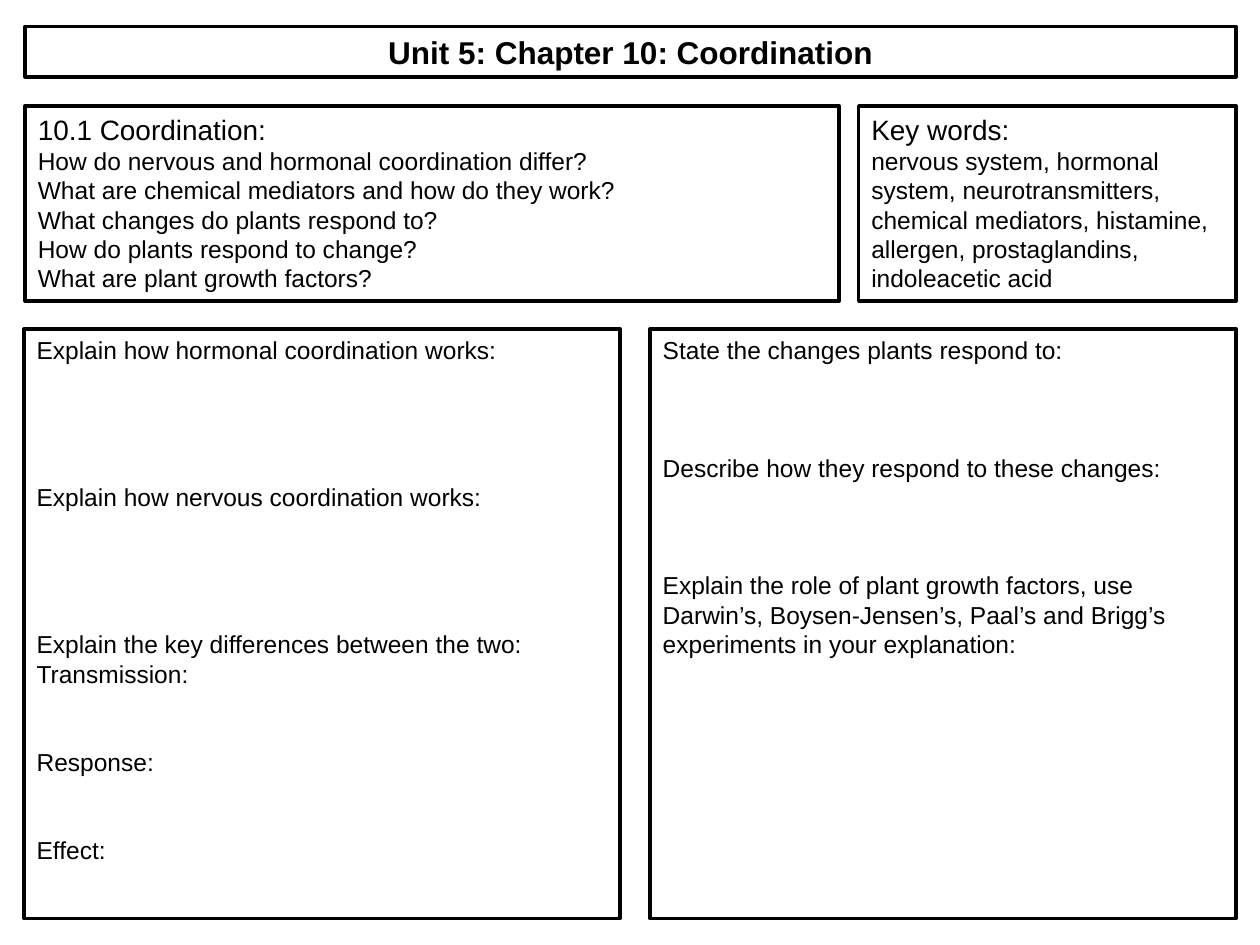
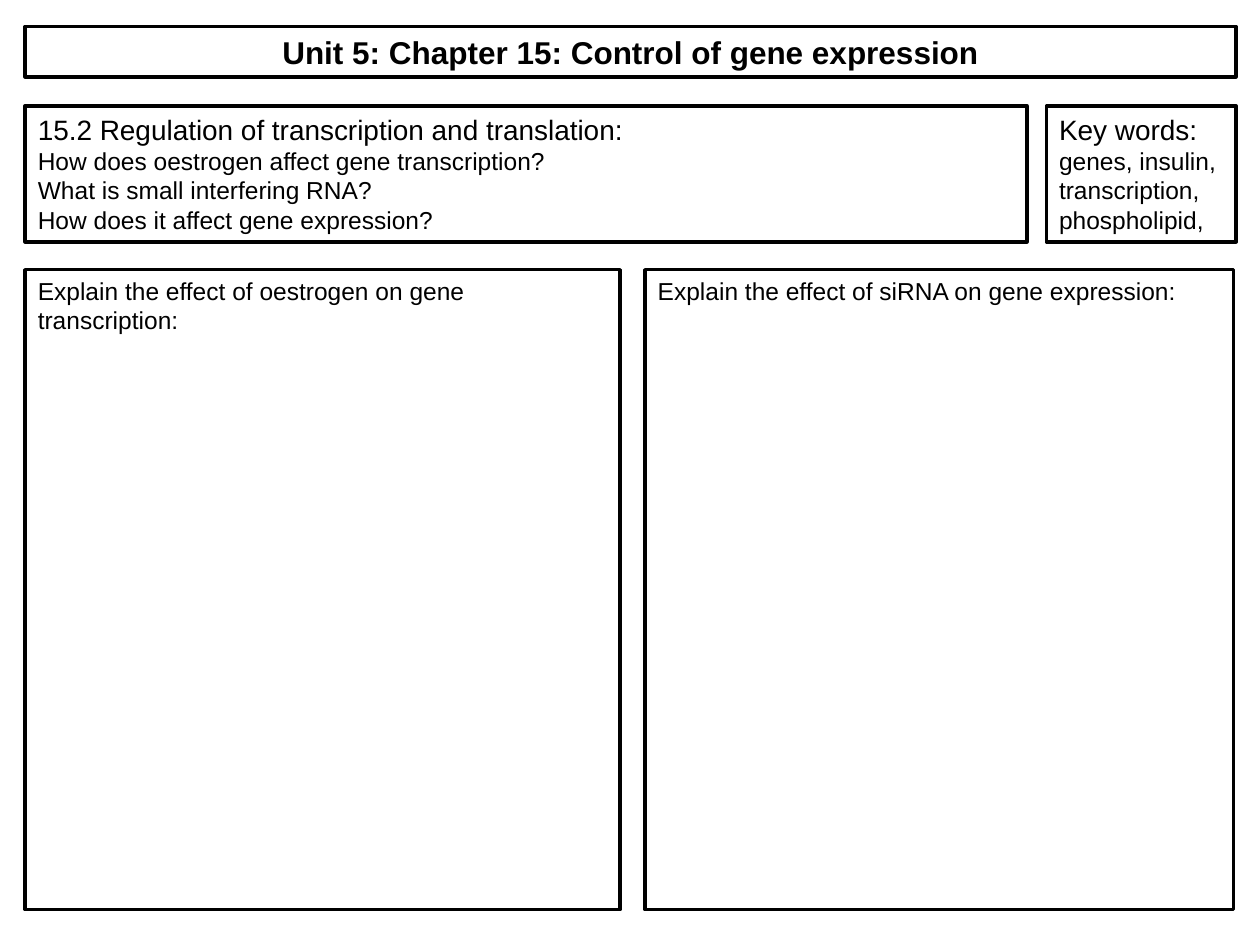
from dataclasses import dataclass

from lxml import etree
from pptx import Presentation
from pptx import util as u
from pptx.dml.color import RGBColor
from pptx.enum import text
from pptx.oxml.ns import qn


@dataclass(frozen=True)
class Theme:
    font: str = "Arial"
    ink: RGBColor = RGBColor(0, 0, 0)
    paper: RGBColor = RGBColor(255, 255, 255)
    title: int = 18
    head: int = 16
    body: int = 14
    line: int = 2
    lead: float = 1.2


COLS = 100
LEFT, RIGHT = 2, 98.1
TOP, HIGH = 2.1, 4
ROW = 8.4
GUTTER, GAP = 1.55, 2.2


class Sheet:
    def __init__(self, deck, theme):
        self.deck = deck
        self.theme = theme
        self.cell = deck.slide_width / COLS
        self.slide = None

    def start(self):
        layout = self.deck.slide_layouts.get_by_name("Comparison")
        self.slide = self.deck.slides.add_slide(layout)

    def box(self, slot, left, top, right, low):
        shape = next(s for s in self.slide.placeholders
                     if s.placeholder_format.idx == slot)
        place = dict(left=left, top=top, width=right - left, height=low - top)
        for key, val in place.items():
            setattr(shape, key, u.Emu(round(val * self.cell)))
        shape.fill.solid()
        shape.fill.fore_color.rgb = self.theme.paper
        shape.line.color.rgb = self.theme.ink
        shape.line.width = u.Pt(self.theme.line)
        frame = shape.text_frame
        form = dict(word_wrap=True, auto_size=text.MSO_AUTO_SIZE.NONE,
                    vertical_anchor=text.MSO_ANCHOR.TOP)
        for key, val in form.items():
            setattr(frame, key, val)
        return frame

    def add_line(self, frame, words, size, skip=0, bold=False,
                 align=text.PP_ALIGN.LEFT):
        para = frame.paragraphs[0]
        if para.runs:
            para = frame.add_paragraph()
        run = para.add_run()
        run.text = words
        pitch = size * self.theme.lead
        form = dict(alignment=align, line_spacing=u.Pt(pitch),
                    space_before=u.Pt(skip * pitch), space_after=u.Pt(0))
        for key, val in form.items():
            setattr(para, key, val)
        props = para._p.get_or_add_pPr()
        for key in ("marL", "indent"):
            props.set(key, "0")
        etree.SubElement(props, qn("a:buNone"))
        for key, val in dict(name=self.theme.font, size=u.Pt(size),
                             bold=bold).items():
            setattr(run.font, key, val)
        run.font.color.rgb = self.theme.ink

    def title(self, words):
        frame = self.box(0, LEFT, TOP, RIGHT, TOP + HIGH)
        self.add_line(frame, words, self.theme.title, bold=True,
                      align=text.PP_ALIGN.CENTER)

    def topic(self, slot, area, head, lines):
        frame = self.box(slot, *area)
        self.add_line(frame, head, self.theme.head)
        for line in lines:
            self.add_line(frame, line, self.theme.body)

    def tasks(self, slot, area, items):
        frame = self.box(slot, *area)
        for skip, words in items:
            self.add_line(frame, words, self.theme.body, skip)

    def page(self, unit):
        self.start()
        self.title(unit["title"])
        split, low = unit["split"], unit["low"]
        self.topic(1, (LEFT, ROW, split, low), unit["topic"], unit["asks"])
        self.topic(3, (split + GUTTER, ROW, RIGHT, low), "Key words:",
                   [unit["keys"]])
        for slot, (left, right), items in zip((2, 4), unit["spans"],
                                              unit["tasks"]):
            self.tasks(slot, (left, low + GAP, right, unit["foot"]), items)


UNITS = [
    dict(
        title="Unit 5: Chapter 10: Coordination",
        split=66.6, low=23.9, foot=72.9,
        spans=[(1.9, 49.2), (51.6, 98.1)],
        topic="10.1 Coordination:",
        asks=["How do nervous and hormonal coordination differ?",
              "What are chemical mediators and how do they work?",
              "What changes do plants respond to?",
              "How do plants respond to change?",
              "What are plant growth factors?"],
        keys="nervous system, hormonal system, neurotransmitters, "
             "chemical mediators, histamine, allergen, prostaglandins, "
             "indoleacetic acid",
        tasks=[
            [(0, "Explain how hormonal coordination works:"),
             (4, "Explain how nervous coordination works:"),
             (4, "Explain the key differences between the two:"),
             (0, "Transmission:"),
             (2, "Response:"),
             (2, "Effect:")],
            [(0, "State the changes plants respond to:"),
             (3, "Describe how they respond to these changes:"),
             (3, "Explain the role of plant growth factors, use Darwin’s, "
                 "Boysen-Jensen’s, Paal’s and Brigg’s experiments in your "
                 "explanation:")],
        ],
    ),
    dict(
        title="Unit 5: Chapter 15: Control of gene expression",
        split=81.5, low=19.2, foot=72.2,
        spans=[(2, 49.2), (51.2, 97.9)],
        topic="15.2 Regulation of transcription and translation:",
        asks=["How does oestrogen affect gene transcription?",
              "What is small interfering RNA?",
              "How does it affect gene expression?"],
        keys="genes, insulin, transcription, phospholipid,",
        tasks=[
            [(0, "Explain the effect of oestrogen on gene transcription:")],
            [(0, "Explain the effect of siRNA on gene expression:")],
        ],
    ),
]


def main():
    deck = Presentation()
    deck.slide_width, deck.slide_height = u.Inches(10), u.Inches(7.5)
    sheet = Sheet(deck, Theme())
    for unit in UNITS:
        sheet.page(unit)
    deck.save("out.pptx")


if __name__ == "__main__":
    main()
